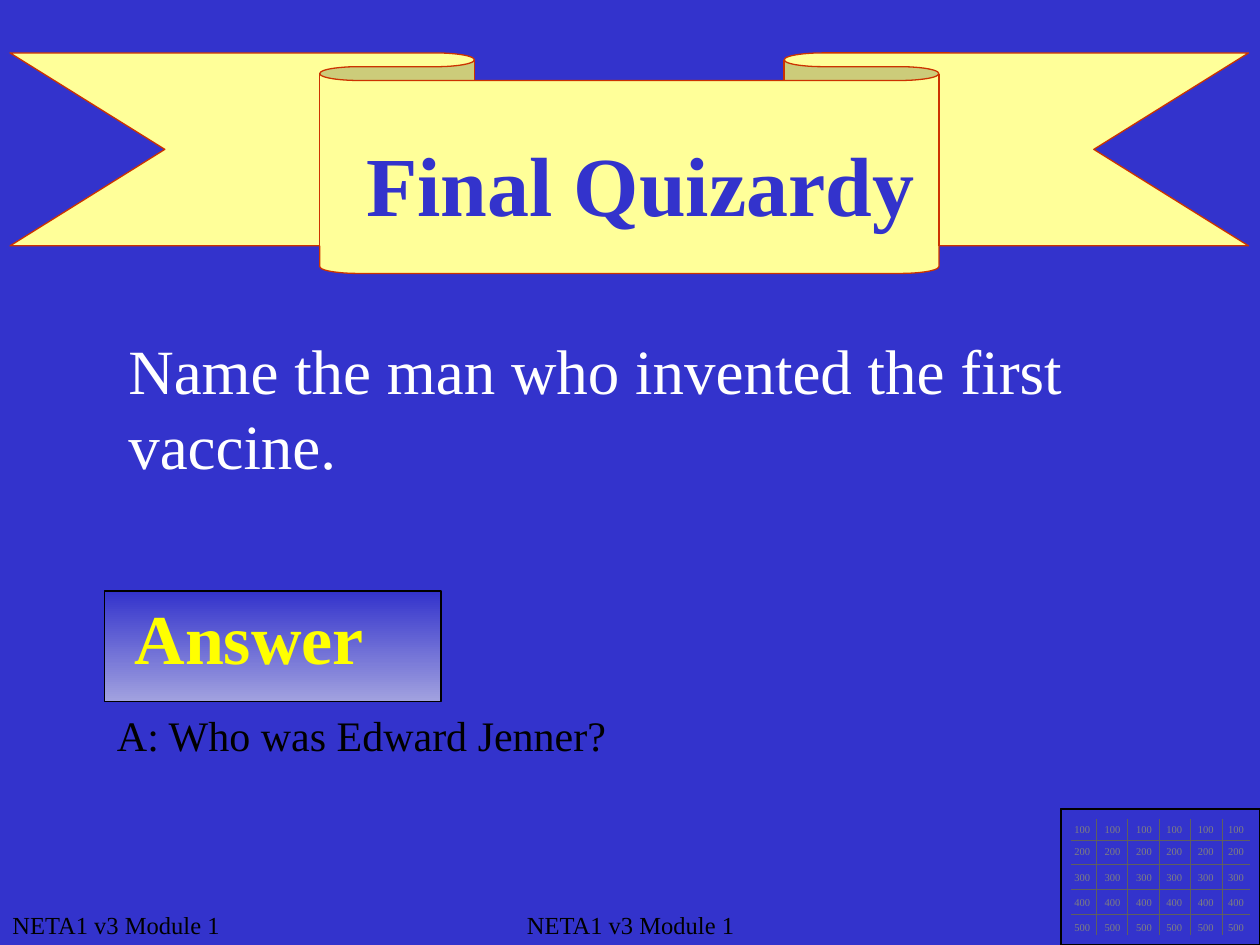
from lxml import etree
from pptx import Presentation
from pptx.dml.color import RGBColor
from pptx.enum import shapes, text
from pptx.oxml import ns
from pptx.util import Inches, Pt

BLUE = RGBColor(0x33, 0x33, 0xCC)
LILAC = RGBColor(0xA2, 0xA2, 0xDF)
CREAM = RGBColor(0xFF, 0xFF, 0x99)
RED = RGBColor(0xCC, 0x33, 0x00)
YELLOW = RGBColor(0xFF, 0xFF, 0x00)
WHITE = RGBColor(0xFF, 0xFF, 0xFF)
BLACK = RGBColor(0, 0, 0)
GRAY = RGBColor(0x80, 0x80, 0x80)
DARK_GRAY = RGBColor(0x5F, 0x5F, 0x5F)
FONT = "Times New Roman"
FOOTER = "NETA1 v3 Module 1"
BOARD = (8.42, 6.42, 1.58, 1.08)
ROW_TOPS = (6.53, 6.71, 6.91, 7.11, 7.31)
RULE_HEIGHTS = (6.67, 6.86, 7.06, 7.26)
COLUMNS = 6


def inches(values):
    return [Inches(value) for value in values]


def add_text(parent, place, words, size, color, bold=False, centered=False,
             grow=True):
    box = parent.shapes.add_textbox(*inches(place))
    frame = box.text_frame
    frame.text = words
    frame.word_wrap = True
    if grow:
        frame.auto_size = text.MSO_AUTO_SIZE.SHAPE_TO_FIT_TEXT
    para = frame.paragraphs[0]
    para.alignment = text.PP_ALIGN.CENTER if centered else text.PP_ALIGN.LEFT
    font = para.runs[0].font
    font.name, font.size, font.bold = FONT, Pt(size), bold
    font.color.rgb = color
    return box


def space_before_half(box):
    """Put half a line of spacing before the first paragraph."""
    properties = box.text_frame.paragraphs[0]._p.get_or_add_pPr()
    spacing = etree.SubElement(properties, ns.qn("a:spcBef"))
    etree.SubElement(spacing, ns.qn("a:spcPct")).set("val", "50000")


def hang_indent(box, depth):
    properties = box.text_frame.paragraphs[0]._p.get_or_add_pPr()
    properties.set("marL", str(Inches(depth)))
    properties.set("indent", str(-Inches(depth)))


def add_outlined(parent, kind, place, line_color, fill_color=None):
    shape = parent.shapes.add_shape(kind, *inches(place))
    shape.shadow.inherit = False
    shape.line.color.rgb = line_color
    shape.line.width = Pt(0.75)
    if fill_color is None:
        shape.fill.background()
    else:
        shape.fill.solid()
        shape.fill.fore_color.rgb = fill_color
    return shape


def add_rule(parent, *ends):
    rule = parent.shapes.add_connector(shapes.MSO_CONNECTOR.STRAIGHT,
                                       *inches(ends))
    rule.line.color.rgb = DARK_GRAY
    rule.line.width = Pt(0.75)
    etree.SubElement(rule._element.spPr, ns.qn("a:effectLst"))


def add_answer_button(page):
    group = page.shapes.add_group_shape()
    button = add_outlined(group, shapes.MSO_SHAPE.ACTION_BUTTON_CUSTOM,
                          (0.83, 4.69, 2.67, 0.88), BLACK)
    button.fill.gradient()
    button.fill.gradient_angle = 270
    for stop, color in zip(button.fill.gradient_stops, (BLUE, LILAC)):
        stop.color.rgb = color
    space_before_half(add_text(group, (0.97, 4.67, 2.53, 0.77), "Answer", 40,
                               YELLOW, bold=True))


def add_banner(page):
    ribbon = add_outlined(page, shapes.MSO_SHAPE.DOWN_RIBBON,
                          (0.08, 0.42, 9.83, 1.75), RED, CREAM)
    ribbon.adjustments[0] = 0.125
    ribbon.adjustments[1] = 0.5
    space_before_half(add_text(page, (0.92, 1, 8.33, 0.9), "Final Quizardy",
                               48, BLUE, bold=True, centered=True))


def add_score_board(page):
    group = page.shapes.add_group_shape()
    add_outlined(group, shapes.MSO_SHAPE.ACTION_BUTTON_CUSTOM, BOARD, BLACK,
                 BLUE)
    for column in range(COLUMNS - 1):
        x = 8.7 + 0.25 * column
        add_rule(group, x, 6.5, x, 7.42)
    for y in RULE_HEIGHTS:
        add_rule(group, 8.5, y, 9.92, y)
    for row, top in enumerate(ROW_TOPS, 1):
        for column in range(COLUMNS):
            left = round(8.52 + 0.244 * column, 2)
            label = add_text(group, (left, top, 0.14, 0.1), str(100 * row), 6,
                             GRAY, centered=True)
            frame = label.text_frame
            frame.margin_left = frame.margin_right = 0
            frame.margin_top = frame.margin_bottom = 0
    add_outlined(page, shapes.MSO_SHAPE.RECTANGLE, BOARD, BLACK)


def main():
    deck = Presentation()
    deck.slide_width, deck.slide_height = Inches(10), Inches(7.5)
    page = deck.slides.add_slide(deck.slide_layouts[6])
    page.background.fill.solid()
    page.background.fill.fore_color.rgb = BLUE

    add_text(page, (0, 7.17, 10, 0.33), FOOTER, 14, BLACK, grow=False)
    add_answer_button(page)
    answer = add_text(page, (0.83, 5.58, 8.25, 0.5),
                      "A: Who was Edward Jenner?", 24, BLACK)
    hang_indent(answer, 0.43)
    space_before_half(answer)
    space_before_half(add_text(page, (0.92, 2.58, 8.33, 1.3),
                               "Name the man who invented the first vaccine.",
                               36, WHITE))
    add_banner(page)
    add_text(page, (1.67, 7.17, 6.67, 0.33), FOOTER, 14, BLACK, centered=True,
             grow=False)
    add_score_board(page)
    deck.save("out.pptx")


if __name__ == "__main__":
    main()
